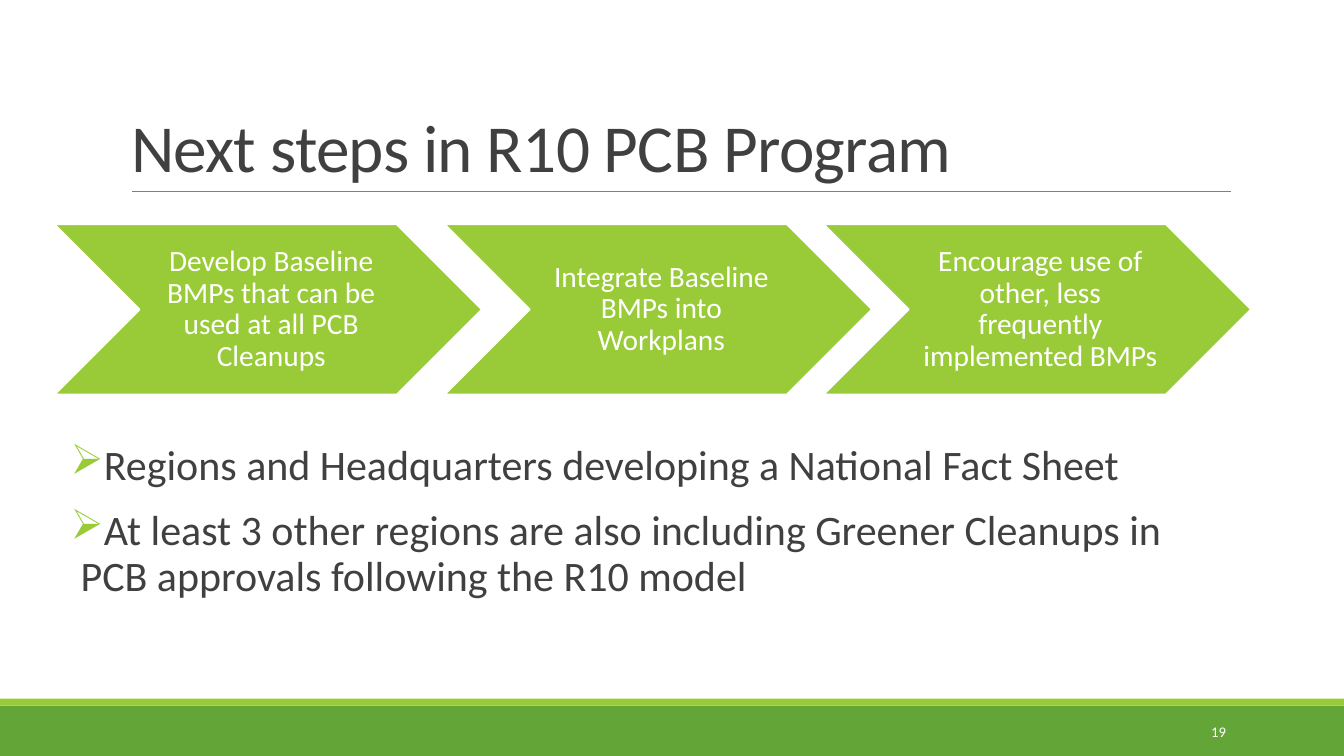
"""Build the slide on next steps in the R10 PCB program."""
from dataclasses import dataclass, field

from pptx import Presentation
from pptx import util as u
from pptx.dml.color import RGBColor
from pptx.enum import shapes, text
from pptx.oxml import ns, xmlchemy

COLORS = {
    "white": "FFFFFF",
    "lime": "99CB38",
    "green": "63A537",
    "gray": "808080",
    "ink": "404040",
}
WIDTH, HEIGHT = u.Inches(13.333), u.Inches(7.5)
CHEVRON_TOP, CHEVRON_WIDTH, CHEVRON_HEIGHT = 29.67, 31.8, 22.53
BULLET_INDENT = u.Inches(0.1)


@dataclass
class Area:
    """A rectangle in percent of the slide's width and height."""
    left: float
    top: float
    width: float
    height: float

    def box(self) -> tuple:
        return (across(self.left), down(self.top), across(self.width), down(self.height))


@dataclass
class Style:
    """Formats for a text frame, its paragraphs and their font."""
    size: float
    color: str
    frame: dict = field(default_factory=dict)
    paragraph: dict = field(default_factory=dict)


@dataclass
class Step:
    """A chevron and the words it holds."""
    left: float
    label: str


BANDS = {"green": Area(0, 93.33, 100, 6.67), "lime": Area(0, 92.4, 100, 0.93)}
STEPS = [
    Step(4.05, "Develop Baseline BMPs that can be used at all PCB Cleanups"),
    Step(33.08, "Integrate Baseline BMPs into Workplans"),
    Step(61.28, "Encourage use of other, less frequently implemented BMPs"),
]
NOTES = [
    "Regions and Headquarters developing a National Fact Sheet",
    "At least 3 other regions are also including Greener Cleanups in "
    "PCB approvals following the R10 model",
]
TITLE_STYLE = Style(
    48, "ink",
    {"vertical_anchor": text.MSO_ANCHOR.BOTTOM},
    {"alignment": text.PP_ALIGN.LEFT, "line_spacing": 0.85},
)
STEP_STYLE = Style(
    21, "white",
    {"vertical_anchor": text.MSO_ANCHOR.MIDDLE, "margin_left": u.Inches(0.09),
     "margin_top": u.Inches(0.03), "margin_right": u.Inches(0.03),
     "margin_bottom": u.Inches(0.03)},
    {"alignment": text.PP_ALIGN.CENTER, "line_spacing": 0.9},
)
NOTE_STYLE = Style(
    30, "ink",
    {"margin_left": 0, "margin_right": 0},
    {"line_spacing": 0.9, "space_before": u.Pt(12), "space_after": u.Pt(2)},
)
NUMBER_STYLE = Style(
    10.5, "white",
    {"vertical_anchor": text.MSO_ANCHOR.MIDDLE},
    {"alignment": text.PP_ALIGN.RIGHT},
)


def across(percent: float) -> int:
    return round(WIDTH * percent / 100)


def down(percent: float) -> int:
    return round(HEIGHT * percent / 100)


def color(name: str) -> RGBColor:
    return RGBColor.from_string(COLORS[name])


def apply(target: object, values: dict) -> None:
    for name, value in values.items():
        setattr(target, name, value)


def write(shape, lines: list[str], style: Style) -> None:
    frame = shape.text_frame
    frame.text = "\n".join(lines)
    apply(frame, {"word_wrap": True, "auto_size": text.MSO_AUTO_SIZE.NONE, **style.frame})
    for paragraph in frame.paragraphs:
        apply(paragraph, style.paragraph)
        font = paragraph.runs[0].font
        apply(font, {"name": "Calibri", "size": u.Pt(style.size)})
        font.color.rgb = color(style.color)


def add_filled(slide, kind: shapes.MSO_SHAPE, area: Area, fill: str):
    shape = slide.shapes.add_shape(kind, *area.box())
    shape.shadow.inherit = False
    shape.fill.solid()
    shape.fill.fore_color.rgb = color(fill)
    shape.line.fill.background()
    return shape


def set_line(shape, name: str, width: float) -> None:
    shape.line.color.rgb = color(name)
    shape.line.width = u.Pt(width)


def add_rule(slide) -> None:
    height = down(25.33)
    rule = slide.shapes.add_connector(
        shapes.MSO_CONNECTOR.STRAIGHT, across(9.83), height, across(91.58), height)
    set_line(rule, "gray", 0.5)
    rule.element.spPr.append(xmlchemy.OxmlElement("a:effectLst"))


def add_step(slide, step: Step) -> None:
    area = Area(step.left, CHEVRON_TOP, CHEVRON_WIDTH, CHEVRON_HEIGHT)
    chevron = add_filled(slide, shapes.MSO_SHAPE.CHEVRON, area, "lime")
    set_line(chevron, "white", 1.25)
    write(chevron, [step.label], STEP_STYLE)


def add_text(slide, area: Area, lines: list[str], style: Style):
    shape = slide.shapes.add_textbox(*area.box())
    write(shape, lines, style)
    return shape


def add_bullet(paragraph) -> None:
    properties = paragraph._p.get_or_add_pPr()
    properties.set("marL", str(BULLET_INDENT))
    properties.set("indent", str(-BULLET_INDENT))
    bullet_color = xmlchemy.OxmlElement("a:buClr")
    swatch = xmlchemy.OxmlElement("a:srgbClr")
    swatch.set("val", COLORS["lime"])
    bullet_color.append(swatch)
    bullet = xmlchemy.OxmlElement("a:buChar")
    bullet.set("char", "➢")
    properties.extend([bullet_color, bullet])


def place_title(slide) -> None:
    title = slide.shapes.title
    apply(title, dict(zip(("left", "top", "width", "height"), Area(9, 4.13, 82.5, 21.2).box())))
    write(title, ["Next steps in R10 PCB Program"], TITLE_STYLE)
    for properties in title.element.iter(ns.qn("a:rPr")):
        properties.set("spc", "-50")


def main() -> None:
    presentation = Presentation()
    apply(presentation, {"slide_width": WIDTH, "slide_height": HEIGHT})
    slide = presentation.slides.add_slide(presentation.slide_layouts[5])
    for fill, area in BANDS.items():
        add_filled(slide, shapes.MSO_SHAPE.RECTANGLE, area, fill)
    add_rule(slide)
    for step in STEPS:
        add_step(slide, step)
    place_title(slide)
    notes = add_text(slide, Area(5.25, 58.13, 82.5, 38.67), NOTES, NOTE_STYLE)
    for paragraph in notes.text_frame.paragraphs:
        add_bullet(paragraph)
    add_text(slide, Area(81.23, 94.13, 10.73, 5.33), ["19"], NUMBER_STYLE)
    presentation.save("out.pptx")


if __name__ == "__main__":
    main()
